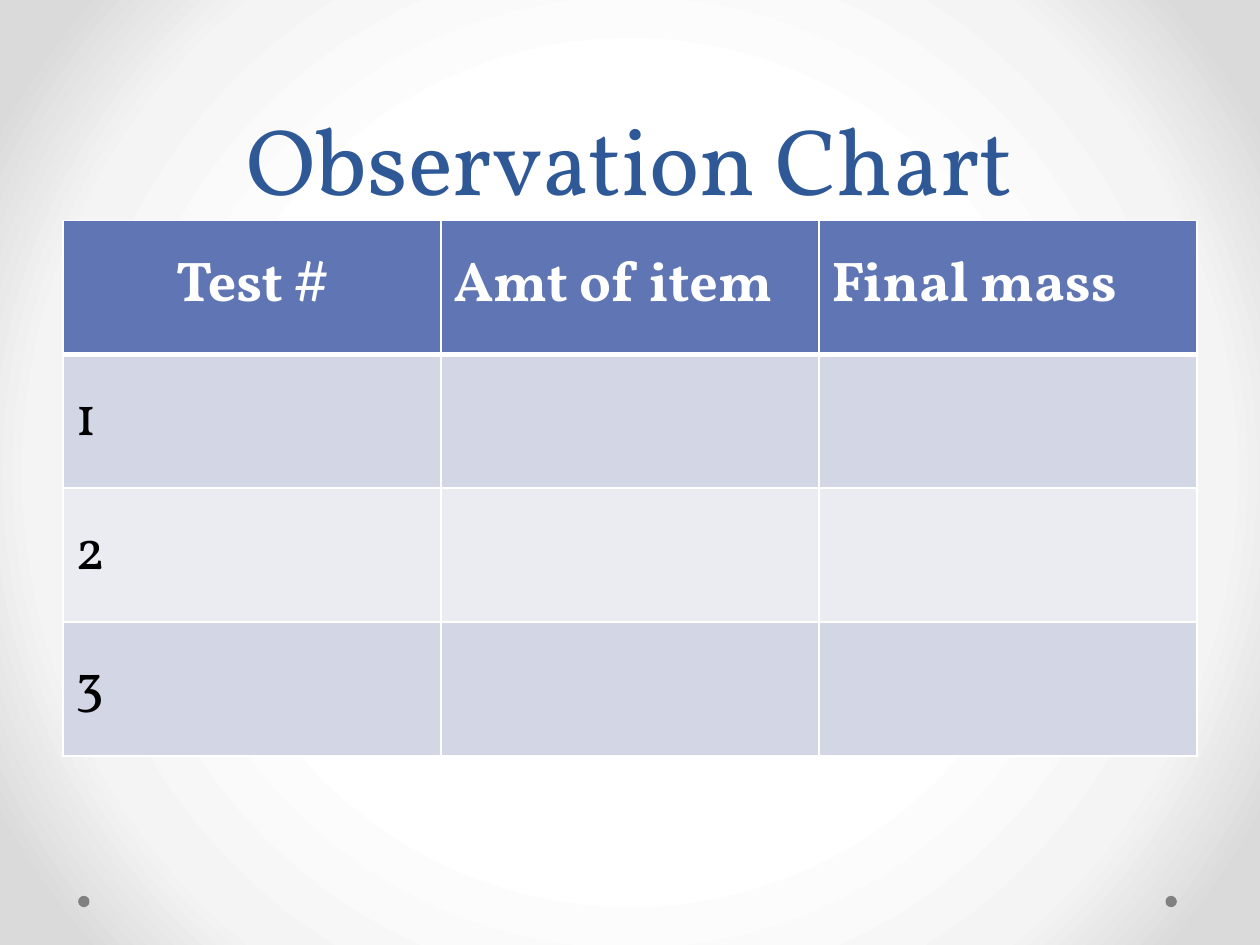
from lxml.etree import SubElement
from pptx import Presentation
from pptx.dml.color import RGBColor
from pptx.enum.shapes import MSO_SHAPE
from pptx.enum.text import MSO_ANCHOR, MSO_AUTO_SIZE, PP_ALIGN
from pptx.oxml.ns import qn
from pptx.util import Pt

PX = 9144  # 100 px to the inch
FONT = "Vollkorn"
NAVY = RGBColor(0x2F, 0x58, 0x97)
BLUE = RGBColor(0x60, 0x76, 0xB4)
BANDS = RGBColor(0xD2, 0xD6, 0xE5), RGBColor(0xEA, 0xEC, 0xF2)
WHITE = RGBColor(0xFF, 0xFF, 0xFF)
BLACK = RGBColor(0, 0, 0)
GRAY = RGBColor(0x80, 0x80, 0x80)
GLOW = (50, WHITE), (76, RGBColor(0xF4, 0xF4, 0xF4)), (92, RGBColor(0xDA, 0xDA, 0xDA))

ROWS = [
    ["Test #", "Amt of item", "Final mass"],
    ["1", "", ""],
    ["2", "", ""],
    ["3", "", ""],
]


def emu(*vals):
    return [round(val * PX) for val in vals]


def style(para, size, color, bold=False):
    font = para.font if not para.runs else para.runs[0].font
    font.name, font.size, font.bold = FONT, Pt(size), bold
    font.color.rgb = color


def add_glow(slide):
    """Fill the background with a gradient that darkens outward."""
    slide.background.fill.gradient()
    grad = slide.element.xpath(".//p:bgPr/a:gradFill")[0]
    for child in list(grad):
        grad.remove(child)
    stops = SubElement(grad, qn("a:gsLst"))
    for pos, color in GLOW:
        stop = SubElement(stops, qn("a:gs"), pos=str(pos * 1000))
        SubElement(stop, qn("a:srgbClr"), val=str(color))
    path = SubElement(grad, qn("a:path"), path="circle")
    SubElement(path, qn("a:fillToRect"), dict.fromkeys("ltrb", "50000"))


def add_dot(slide, box):
    dot = slide.shapes.add_shape(MSO_SHAPE.OVAL, *emu(*box))
    dot.shadow.inherit = False
    dot.fill.solid()
    dot.fill.fore_color.rgb = GRAY
    dot.line.fill.background()


def set_title(slide, box, text):
    title = slide.shapes.title
    title.left, title.top, title.width, title.height = emu(*box)
    frame = title.text_frame
    frame.text = text
    frame.auto_size = MSO_AUTO_SIZE.NONE
    frame.word_wrap = True
    frame.vertical_anchor = MSO_ANCHOR.BOTTOM
    para = frame.paragraphs[0]
    para.alignment = PP_ALIGN.CENTER
    para.line_spacing = Pt(58)
    style(para, 54, NAVY)


def set_edges(cell, widths):
    """Draw white cell borders, given widths in points by side."""
    props = cell._tc.get_or_add_tcPr()
    for spot, (side, width) in enumerate(widths.items()):
        line = props.makeelement(qn("a:ln" + side), {"w": str(Pt(width))})
        fill = SubElement(line, qn("a:solidFill"))
        SubElement(fill, qn("a:srgbClr"), val=str(WHITE))
        props.insert(spot, line)


def add_grid(slide, box, rows):
    frame = slide.shapes.add_table(len(rows), len(rows[0]), *emu(*box))
    table = frame.table
    for r, row in enumerate(rows):
        head = r == 0
        for c, text in enumerate(row):
            cell = table.cell(r, c)
            cell.text = text
            cell.vertical_anchor = MSO_ANCHOR.MIDDLE
            cell.fill.solid()
            cell.fill.fore_color.rgb = BLUE if head else BANDS[(r - 1) % 2]
            para = cell.text_frame.paragraphs[0]
            style(para, 32, WHITE if head else BLACK, head)
            if head and c == 0:
                para.alignment = PP_ALIGN.CENTER
            top, base = 3 if r == 1 else 1, 3 if head else 1
            set_edges(cell, {"L": 1, "R": 1, "T": top, "B": base})


def main():
    deck = Presentation()
    deck.slide_width, deck.slide_height = emu(1000, 750)
    slide = deck.slides.add_slide(deck.slide_layouts[5])
    add_glow(slide)
    for left in (925, 62):
        add_dot(slide, (left, 711, 9, 9))
    set_title(slide, (50, 0, 900, 175), "Observation Chart")
    add_grid(slide, (50, 175, 900, 425), ROWS)
    deck.save("out.pptx")


if __name__ == "__main__":
    main()
